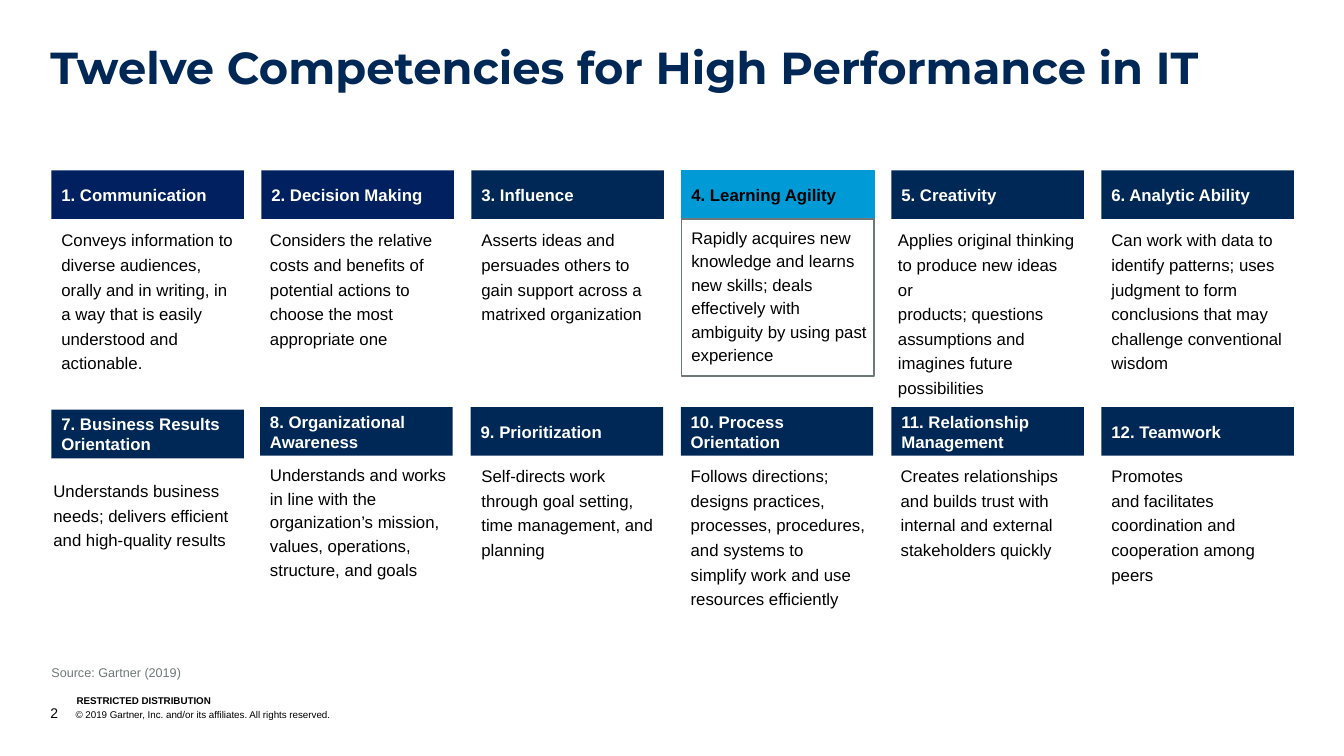
from dataclasses import dataclass

from lxml import etree
from pptx import Presentation
from pptx.dml.color import RGBColor
from pptx.enum.shapes import MSO_SHAPE
from pptx.enum.text import MSO_ANCHOR, MSO_AUTO_SIZE, PP_ALIGN
from pptx.oxml.ns import qn
from pptx.util import Pt

RECTANGLE = MSO_SHAPE.RECTANGLE
TOP, MIDDLE, BOTTOM = MSO_ANCHOR.TOP, MSO_ANCHOR.MIDDLE, MSO_ANCHOR.BOTTOM
LEFT = PP_ALIGN.LEFT
NO_AUTOFIT = MSO_AUTO_SIZE.NONE

COLORS = {
    "navy": "002856", "indigo": "002060", "sky": "009AD7",
    "gray": "6F7878", "white": "FFFFFF", "black": "000000",
}

# Grid, in points
COLUMNS = 6
GRID_LEFT, COLUMN_PITCH, CARD_WIDTH = 36.75, 150, 137.5
HEADER_TOPS, HEADER_HEIGHT = (121.7, 290.9), 34.7
BODY_TOPS, BODY_HEIGHT = (157.7, 326.2), 112.3
FOOTER_INDENT = 18


@dataclass
class Competency:
    name: str
    description: str
    fill: str = "navy"
    name_color: str = "white"
    border: str = ""
    line_spacing: float = 1.22
    header_shift: tuple[float, float] = (0, 0)
    body_shift: tuple[float, float] = (0, 0)


COMPETENCIES = [
    Competency("Communication",
               "Conveys information to diverse audiences, orally and in writing, "
               "in a way that is easily understood and actionable.", fill="indigo"),
    Competency("Decision Making",
               "Considers the relative costs and benefits of potential actions "
               "to choose the most appropriate one",
               fill="indigo", body_shift=(-1, 0)),
    Competency("Influence",
               "Asserts ideas and persuades others to gain support across "
               "a matrixed organization"),
    Competency("Learning Agility",
               "Rapidly acquires new knowledge and learns new skills; deals "
               "effectively with ambiguity by using past experience",
               fill="sky", name_color="black", border="gray",
               line_spacing=1.17, body_shift=(0, -1.3)),
    Competency("Creativity",
               "Applies original thinking to produce new ideas\nor\n"
               "products; questions assumptions and imagines future possibilities",
               body_shift=(-2.4, 0)),
    Competency("Analytic Ability",
               "Can work with data to identify patterns; uses judgment to form "
               "conclusions that may challenge conventional wisdom"),
    Competency("Business Results Orientation",
               "Understands business needs; delivers efficient and "
               "high-quality results",
               header_shift=(0, 1.8), body_shift=(-5.7, 10.7)),
    Competency("Organizational \nAwareness",
               "Understands and works in line with the organization’s mission, "
               "values, operations, structure, and goals",
               line_spacing=1.17, header_shift=(-1, 0), body_shift=(-1, 0)),
    Competency("Prioritization",
               "Self-directs work through goal setting, time management, "
               "and planning", header_shift=(-0.5, 0)),
    Competency("Process Orientation",
               "Follows directions; designs practices, processes, procedures, "
               "and systems to \nsimplify work and use resources efficiently",
               header_shift=(-0.5, 0), body_shift=(-0.5, 0)),
    Competency("Relationship \nManagement",
               "Creates relationships and builds trust with internal and "
               "external stakeholders quickly", body_shift=(-0.5, 0)),
    Competency("Teamwork",
               "Promotes \nand facilitates \ncoordination and cooperation "
               "among peers"),
]


def rgb(color: str) -> RGBColor:
    return RGBColor.from_string(COLORS[color])


def set_attributes(target, values: dict) -> None:
    for name, value in values.items():
        setattr(target, name, value)


def write_text(shape, text: str, size: float, color: str = "black",
               bold: bool = False, font: str = "Arial", anchor=TOP,
               insets=(7.2, 3.6, 7.2, 3.6), line_spacing: float = 1.0):
    frame = shape.text_frame
    left, top, right, bottom = (Pt(inset) for inset in insets)
    set_attributes(frame, {
        "word_wrap": True, "auto_size": NO_AUTOFIT, "vertical_anchor": anchor,
        "margin_left": left, "margin_top": top,
        "margin_right": right, "margin_bottom": bottom,
    })
    paragraph = frame.paragraphs[0]
    paragraph.text = text
    set_attributes(paragraph, {"alignment": LEFT, "line_spacing": line_spacing})
    for run in paragraph.runs:
        set_attributes(run.font, {"name": font, "size": Pt(size), "bold": bold})
        run.font.color.rgb = rgb(color)
    return paragraph


def add_box(slide, left: float, top: float, width: float, height: float,
            fill: str = "", border: str = ""):
    area = [Pt(length) for length in (left, top, width, height)]
    if not (fill or border):
        return slide.shapes.add_textbox(*area)
    shape = slide.shapes.add_shape(RECTANGLE, *area)
    shape.shadow.inherit = False
    if fill:
        shape.fill.solid()
        shape.fill.fore_color.rgb = rgb(fill)
    else:
        shape.fill.background()
    if border:
        shape.line.color.rgb = rgb(border)
        shape.line.width = Pt(1)
    else:
        shape.line.fill.background()
    return shape


def add_competency(slide, index: int, item: Competency) -> None:
    row, column = divmod(index, COLUMNS)
    left = GRID_LEFT + column * COLUMN_PITCH
    shift_x, shift_y = item.header_shift
    header = add_box(slide, left + shift_x, HEADER_TOPS[row] + shift_y,
                     CARD_WIDTH, HEADER_HEIGHT, item.fill,
                     item.fill if item.border else "")
    write_text(header, f"{index + 1}. {item.name}", 12, item.name_color,
               bold=True, anchor=MIDDLE)
    shift_x, shift_y = item.body_shift
    body = add_box(slide, left + shift_x, BODY_TOPS[row] + shift_y,
                   CARD_WIDTH, BODY_HEIGHT, border=item.border)
    write_text(body, item.description, 12, insets=(7.2, 3.6, 2.9, 3.6),
               line_spacing=item.line_spacing)


def add_footer(slide) -> None:
    marking = add_box(slide, 54.7, 496.1, 182, 8.6)
    write_text(marking, "RESTRICTED DISTRIBUTION", 7, bold=True,
               anchor=BOTTOM, insets=(0, 0, 0, 0))
    notice = add_box(slide, 36, 503.3, 575, 12.2)
    paragraph = write_text(notice, "2", 10, anchor=BOTTOM, insets=(0, 0, 0, 0))
    # Hanging indent with a tab stop after the page number
    properties = paragraph._p.get_or_add_pPr()
    indent = int(Pt(FOOTER_INDENT))
    properties.set("marL", str(indent))
    properties.set("indent", str(-indent))
    tabs = etree.SubElement(properties, qn("a:tabLst"))
    etree.SubElement(tabs, qn("a:tab"), pos=str(indent), algn="l")
    run = paragraph.add_run()
    run.text = "\t© 2019 Gartner, Inc. and/or its affiliates. All rights reserved."
    set_attributes(run.font, {"name": "Arial", "size": Pt(7)})
    run.font.color.rgb = rgb("black")


def main() -> None:
    presentation = Presentation()
    set_attributes(presentation, {"slide_width": Pt(960), "slide_height": Pt(540)})
    slide = presentation.slides.add_slide(presentation.slide_layouts[5])

    # Title
    title = slide.shapes.title
    set_attributes(title, {"left": Pt(36), "top": Pt(28.8),
                           "width": Pt(888), "height": Pt(34.6)})
    write_text(title, "Twelve Competencies for High Performance in IT", 32, "navy",
               bold=True, font="Montserrat", insets=(0, 3.6, 7.2, 3.6),
               line_spacing=0.9)

    # Competency grid
    for index, item in enumerate(COMPETENCIES):
        add_competency(slide, index, item)

    # Source and footer
    source = add_box(slide, GRID_LEFT, 471.6, 731, 18)
    write_text(source, "Source: Gartner (2019)", 9, "gray",
               insets=(0, 3.6, 7.2, 3.6))
    add_footer(slide)

    presentation.save("out.pptx")


if __name__ == "__main__":
    main()
